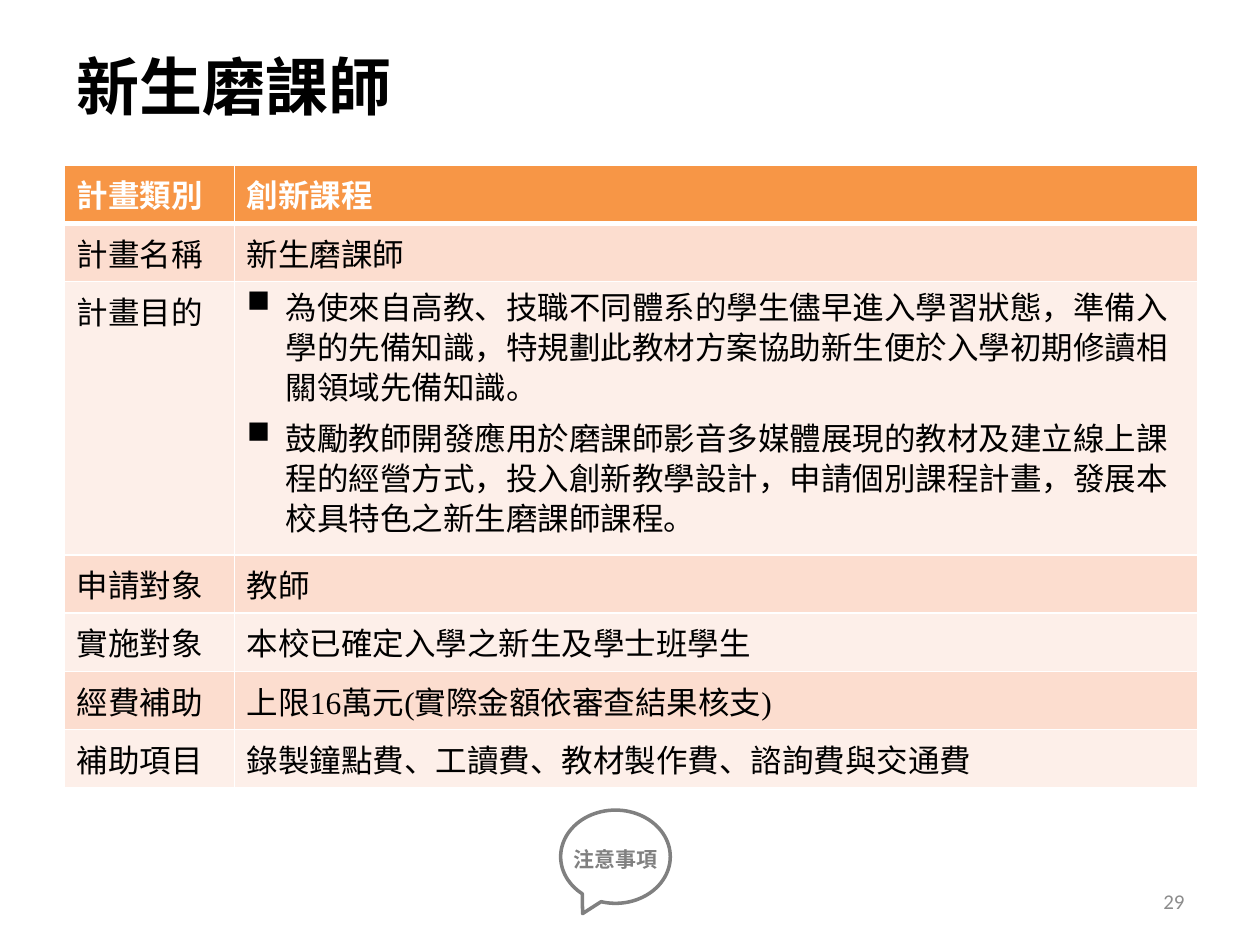
import dataclasses
import typing

import lxml.etree
import pptx
import pptx.dml.color
import pptx.enum.shapes
import pptx.enum.text
import pptx.oxml.ns
import pptx.util

Inches = pptx.util.Inches
Pt = pptx.util.Pt
qn = pptx.oxml.ns.qn
Align = pptx.enum.text.PP_ALIGN
Anchor = pptx.enum.text.MSO_ANCHOR


@dataclasses.dataclass(frozen=True)
class Theme:
    heading_font: str = "Noto Sans CJK SC"
    table_font: str = "Times New Roman"
    number_font: str = "Calibri"
    title_size: int = 36
    table_size: int = 18
    small_size: int = 12
    black: str = "000000"
    white: str = "FFFFFF"
    grey: str = "808080"
    number_grey: str = "8C8C8C"
    header: str = "F79646"
    bands: tuple[str, str] = ("FCDDCF", "FDEFE9")


@dataclasses.dataclass(frozen=True)
class TextStyle:
    font: str
    size: int
    color: str
    bold: bool = False


@dataclasses.dataclass(frozen=True)
class PlanRow:
    label: str
    lines: tuple[str, ...]
    height: float


THEME = Theme()
TITLE = TextStyle(THEME.heading_font, THEME.title_size, THEME.black, True)
HEADER = TextStyle(THEME.table_font, THEME.table_size, THEME.white, True)
BODY = TextStyle(THEME.table_font, THEME.table_size, THEME.black)
NOTE = TextStyle(THEME.heading_font, THEME.small_size, THEME.grey, True)
NUMBER = TextStyle(THEME.number_font, THEME.small_size, THEME.number_grey)

COLUMN_WIDTHS = (1.35, 7.65)
PLAN_ROWS = (
    PlanRow("計畫類別", ("創新課程",), 0.41),
    PlanRow("計畫名稱", ("新生磨課師",), 0.41),
    PlanRow("計畫目的", (
        "為使來自高教、技職不同體系的學生儘早進入學習狀態，準備入學的先備知識，"
        "特規劃此教材方案協助新生便於入學初期修讀相關領域先備知識。",
        "鼓勵教師開發應用於磨課師影音多媒體展現的教材及建立線上課程的經營方式，"
        "投入創新教學設計，申請個別課程計畫，發展本校具特色之新生磨課師課程。",
    ), 2.17),
    PlanRow("申請對象", ("教師",), 0.43),
    PlanRow("實施對象", ("本校已確定入學之新生及學士班學生",), 0.43),
    PlanRow("經費補助", ("上限16萬元(實際金額依審查結果核支)",), 0.43),
    PlanRow("補助項目", ("錄製鐘點費、工讀費、教材製作費、諮詢費與交通費",), 0.43),
)


def rgb(color: str) -> pptx.dml.color.RGBColor:
    return pptx.dml.color.RGBColor.from_string(color)


def style_paragraph(para: typing.Any, style: TextStyle) -> None:
    para.font.name = style.font
    para.font.size = Pt(style.size)
    para.font.bold = style.bold
    para.font.color.rgb = rgb(style.color)
    defaults = para._p.pPr.find(qn("a:defRPr"))
    lxml.etree.SubElement(defaults, qn("a:ea"), typeface=THEME.heading_font)


def add_bullet(para: typing.Any) -> None:
    properties = para._p.get_or_add_pPr()
    properties.set("marL", str(Inches(0.31)))
    properties.set("indent", str(Inches(-0.31)))
    lxml.etree.SubElement(properties, qn("a:buChar"), char="■")
    para.line_spacing = Pt(23)


def write_lines(frame: typing.Any, lines: tuple[str, ...], style: TextStyle) -> None:
    for index, line in enumerate(lines):
        para = frame.add_paragraph() if index else frame.paragraphs[0]
        para.text = line
        if len(lines) > 1:
            add_bullet(para)
        if index:
            para.space_before = Pt(6)
        style_paragraph(para, style)


def add_text(slide: typing.Any, text: str, style: TextStyle,
             left: float, top: float, width: float, height: float,
             anchor: Anchor = Anchor.MIDDLE, align: Align = Align.LEFT) -> None:
    box = slide.shapes.add_textbox(Inches(left), Inches(top), Inches(width), Inches(height))
    frame = box.text_frame
    frame.word_wrap = True
    frame.vertical_anchor = anchor
    frame.paragraphs[0].alignment = align
    write_lines(frame, (text,), style)


def add_borders(cell: typing.Any, bottom_width: int) -> None:
    properties = cell._tc.get_or_add_tcPr()
    for side, width in (("L", 1), ("R", 1), ("T", 1), ("B", bottom_width)):
        line = lxml.etree.SubElement(properties, qn(f"a:ln{side}"), w=str(Pt(width)))
        fill = lxml.etree.SubElement(line, qn("a:solidFill"))
        lxml.etree.SubElement(fill, qn("a:srgbClr"), val=THEME.white)


def add_plan_table(slide: typing.Any) -> None:
    table = slide.shapes.add_table(
        len(PLAN_ROWS), len(COLUMN_WIDTHS), Inches(0.51), Inches(1.31),
        Inches(sum(COLUMN_WIDTHS)), Inches(sum(row.height for row in PLAN_ROWS)),
    ).table
    table.first_row = False
    table.horz_banding = False
    for column, width in zip(table.columns, COLUMN_WIDTHS):
        column.width = Inches(width)
    for index, plan in enumerate(PLAN_ROWS):
        table.rows[index].height = Inches(plan.height)
        color = THEME.bands[(index - 1) % 2] if index else THEME.header
        for column, lines in enumerate(((plan.label,), plan.lines)):
            cell = table.cell(index, column)
            write_lines(cell.text_frame, lines, BODY if index else HEADER)
            add_borders(cell, 1 if index else 3)
            cell.fill.solid()
            cell.fill.fore_color.rgb = rgb(color)


def add_callout(slide: typing.Any) -> None:
    callout = slide.shapes.add_shape(
        pptx.enum.shapes.MSO_SHAPE.OVAL_CALLOUT,
        Inches(4.45), Inches(6.43), Inches(0.87), Inches(0.74))
    callout.adjustments[0] = -0.3
    callout.adjustments[1] = 0.61
    callout.shadow.inherit = False
    callout.fill.background()
    callout.line.color.rgb = rgb(THEME.grey)
    callout.line.width = Pt(2)


def main() -> None:
    deck = pptx.Presentation()
    deck.slide_width = Inches(10)
    deck.slide_height = Inches(7.5)
    slide = deck.slides.add_slide(deck.slide_layouts[6])
    add_plan_table(slide)
    add_text(slide, "新生磨課師", TITLE, 0.51, 0.29, 6.31, 0.77)
    add_text(slide, "29", NUMBER, 7.17, 6.95, 2.33, 0.4, align=Align.RIGHT)
    add_text(slide, "注意事項", NOTE, 4.45, 6.67, 0.88, 0.3, anchor=Anchor.TOP)
    add_callout(slide)
    deck.save("out.pptx")


if __name__ == "__main__":
    main()
